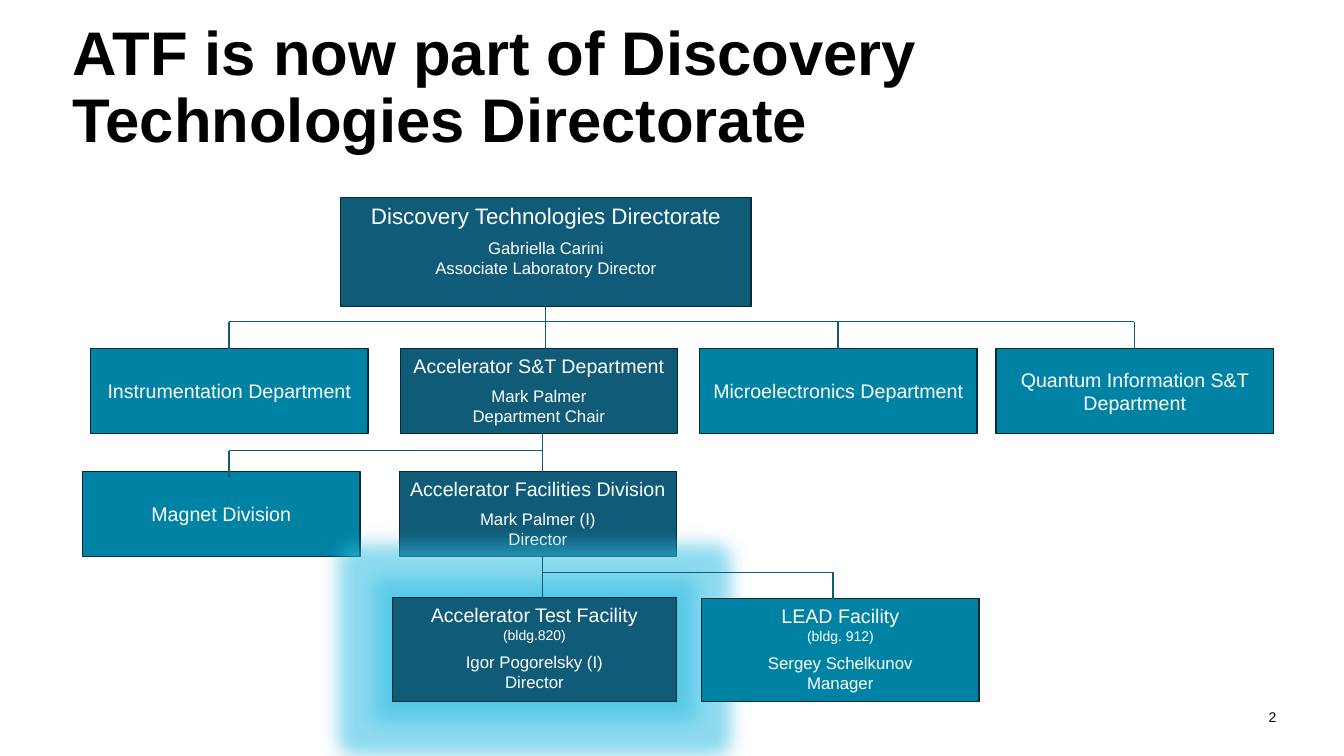
from dataclasses import dataclass

import lxml.etree
import pptx
import pptx.dml.color
import pptx.enum.shapes
import pptx.enum.text
import pptx.oxml.ns
import pptx.shapes.autoshape
import pptx.shapes.base
import pptx.slide
import pptx.text.text
import pptx.util

Inches = pptx.util.Inches
Pt = pptx.util.Pt
ALIGN = pptx.enum.text.PP_ALIGN
ANCHOR = pptx.enum.text.MSO_ANCHOR

COLORS = {
    "lineage": "105C78",
    "sibling": "0082A5",
    "border": "072835",
    "glow": "34BFE4",
    "light": "FFFFFF",
    "dark": "000000",
}
FONT = "Arial"
BOX_WIDTH = 2.75
BOX_HEIGHT = 0.84


@dataclass(frozen=True)
class Unit:
    left: float
    top: float
    name: str
    fill: str = "sibling"
    person: str = ""
    role: str = ""
    building: str = ""
    building_below: bool = False
    width: float = BOX_WIDTH
    height: float = BOX_HEIGHT
    name_size: int = 14
    glows: bool = False


@dataclass(frozen=True)
class Link:
    x1: float
    y1: float
    x2: float
    y2: float


UNITS = [
    Unit(3.38, 1.96, "Discovery Technologies Directorate", "lineage", "Gabriella Carini",
         "Associate Laboratory Director", width=4.07, height=1.08, name_size=16),
    Unit(0.9, 3.46, "Instrumentation Department"),
    Unit(3.97, 3.46, "Accelerator S&T Department", "lineage", "Mark Palmer", "Department Chair"),
    Unit(6.94, 3.46, "Microelectronics Department"),
    Unit(9.88, 3.46, "Quantum Information S&T Department"),
    Unit(0.82, 4.68, "Magnet Division"),
    Unit(3.96, 4.68, "Accelerator Facilities Division", "lineage", "Mark Palmer (I)", "Director"),
    Unit(3.89, 5.93, "Accelerator Test Facility ", "lineage", "Igor Pogorelsky (I)", "Director",
         "(bldg.820)", width=2.82, height=1.03, glows=True),
    Unit(6.96, 5.94, "LEAD Facility", "sibling", "Sergey Schelkunov", "Manager",
         "(bldg. 912)", building_below=True, height=1.02),
]

DEPARTMENT_BAR = 3.19
DIVISION_BAR = 4.47
FACILITY_BAR = 5.68
TRUNK = 5.38
LINKS = [
    Link(2.27, DEPARTMENT_BAR, 11.25, DEPARTMENT_BAR),
    Link(5.41, 2.91, 5.41, 3.46),
    *[Link(x, DEPARTMENT_BAR, x, 3.46) for x in (8.31, 11.25, 2.27)],
    Link(TRUNK, 4.29, TRUNK, 4.45),
    Link(TRUNK, 5.52, TRUNK, FACILITY_BAR),
    Link(2.27, DIVISION_BAR, TRUNK, DIVISION_BAR),
    Link(TRUNK, 4.44, TRUNK, 4.71),
    Link(2.27, DIVISION_BAR, 2.27, 4.73),
    Link(TRUNK, FACILITY_BAR, 8.26, FACILITY_BAR),
    Link(TRUNK, 5.66, TRUNK, 5.93),
    Link(8.26, 5.67, 8.26, 5.94),
]


def rgb(name: str) -> pptx.dml.color.RGBColor:
    return pptx.dml.color.RGBColor.from_string(COLORS[name])


def add_run(paragraph: pptx.text.text._Paragraph, text: str, size: int,
            color: str = "light", bold: bool = False) -> None:
    run = paragraph.add_run()
    run.text = text
    run.font.name = FONT
    run.font.size = Pt(size)
    run.font.bold = bold
    run.font.color.rgb = rgb(color)


def add_line(frame: pptx.text.text.TextFrame, text: str, size: int, space_before: int = 0) -> None:
    paragraph = frame.add_paragraph()
    paragraph.alignment = ALIGN.CENTER
    paragraph.space_before = Pt(space_before)
    add_run(paragraph, text, size)


def add_glow(shape: pptx.shapes.autoshape.Shape) -> None:
    """Surround the shape with a wide pale glow and a narrower, stronger halo."""
    effects = shape._element.spPr.find(pptx.oxml.ns.qn("a:effectLst"))
    for tag, radius_name, radius, alpha in (("a:glow", "rad", 0.36, 50), ("a:outerShdw", "blurRad", 0.14, 60)):
        effect = lxml.etree.SubElement(effects, pptx.oxml.ns.qn(tag), {radius_name: str(Inches(radius))})
        color = lxml.etree.SubElement(effect, pptx.oxml.ns.qn("a:srgbClr"), val=COLORS["glow"])
        lxml.etree.SubElement(color, pptx.oxml.ns.qn("a:alpha"), val=str(alpha * 1000))


def add_unit(slide: pptx.slide.Slide, unit: Unit) -> None:
    shape = slide.shapes.add_shape(
        pptx.enum.shapes.MSO_SHAPE.RECTANGLE,
        Inches(unit.left), Inches(unit.top), Inches(unit.width), Inches(unit.height))
    shape.shadow.inherit = False
    shape.fill.solid()
    shape.fill.fore_color.rgb = rgb(unit.fill)
    shape.line.color.rgb = rgb("border")
    shape.line.width = Pt(1)
    if unit.glows:
        add_glow(shape)

    frame = shape.text_frame
    frame.word_wrap = True
    frame.vertical_anchor = ANCHOR.TOP if unit.person else ANCHOR.MIDDLE
    heading = frame.paragraphs[0]
    heading.alignment = ALIGN.CENTER
    add_run(heading, unit.name, unit.name_size)
    if unit.building_below:
        add_line(frame, unit.building, 10)
    elif unit.building:
        add_run(heading, unit.building, 10)
    if unit.person:
        add_line(frame, unit.person, 12, space_before=6)
        add_line(frame, unit.role, 12)


def add_link(slide: pptx.slide.Slide, link: Link) -> None:
    connector = slide.shapes.add_connector(
        pptx.enum.shapes.MSO_CONNECTOR.STRAIGHT,
        Inches(link.x1), Inches(link.y1), Inches(link.x2), Inches(link.y2))
    connector.line.color.rgb = rgb("lineage")
    connector.line.width = Pt(1)
    lxml.etree.SubElement(connector._element.spPr, pptx.oxml.ns.qn("a:effectLst"))


def place(shape: pptx.shapes.base.BaseShape, left: float, top: float, width: float, height: float) -> None:
    shape.left, shape.top = Inches(left), Inches(top)
    shape.width, shape.height = Inches(width), Inches(height)


def add_title(slide: pptx.slide.Slide) -> None:
    title = slide.shapes.title
    place(title, 0.62, 0.16, 12.08, 1.45)
    frame = title.text_frame
    frame.word_wrap = True
    frame.auto_size = pptx.enum.text.MSO_AUTO_SIZE.NONE
    frame.vertical_anchor = ANCHOR.MIDDLE
    paragraph = frame.paragraphs[0]
    paragraph.alignment = ALIGN.LEFT
    paragraph.line_spacing = 0.9
    add_run(paragraph, "ATF is now part of Discovery Technologies Directorate", 44, "dark", bold=True)


def add_page_number(slide: pptx.slide.Slide) -> None:
    box = slide.shapes.add_textbox(Inches(12.24), Inches(6.91), Inches(0.47), Inches(0.4))
    frame = box.text_frame
    frame.word_wrap = True
    frame.vertical_anchor = ANCHOR.MIDDLE
    frame.margin_left = frame.margin_top = frame.margin_bottom = 0
    frame.margin_right = Inches(0.05)
    paragraph = frame.paragraphs[0]
    paragraph.alignment = ALIGN.RIGHT
    add_run(paragraph, "2", 10, "dark")


def main() -> None:
    presentation = pptx.Presentation()
    presentation.slide_width = Inches(13.33)
    presentation.slide_height = Inches(7.5)
    slide = presentation.slides.add_slide(presentation.slide_layouts.get_by_name("Title Only"))
    add_title(slide)
    add_page_number(slide)
    for unit in UNITS:
        add_unit(slide, unit)
    for link in LINKS:
        add_link(slide, link)
    presentation.save("out.pptx")


if __name__ == "__main__":
    main()
